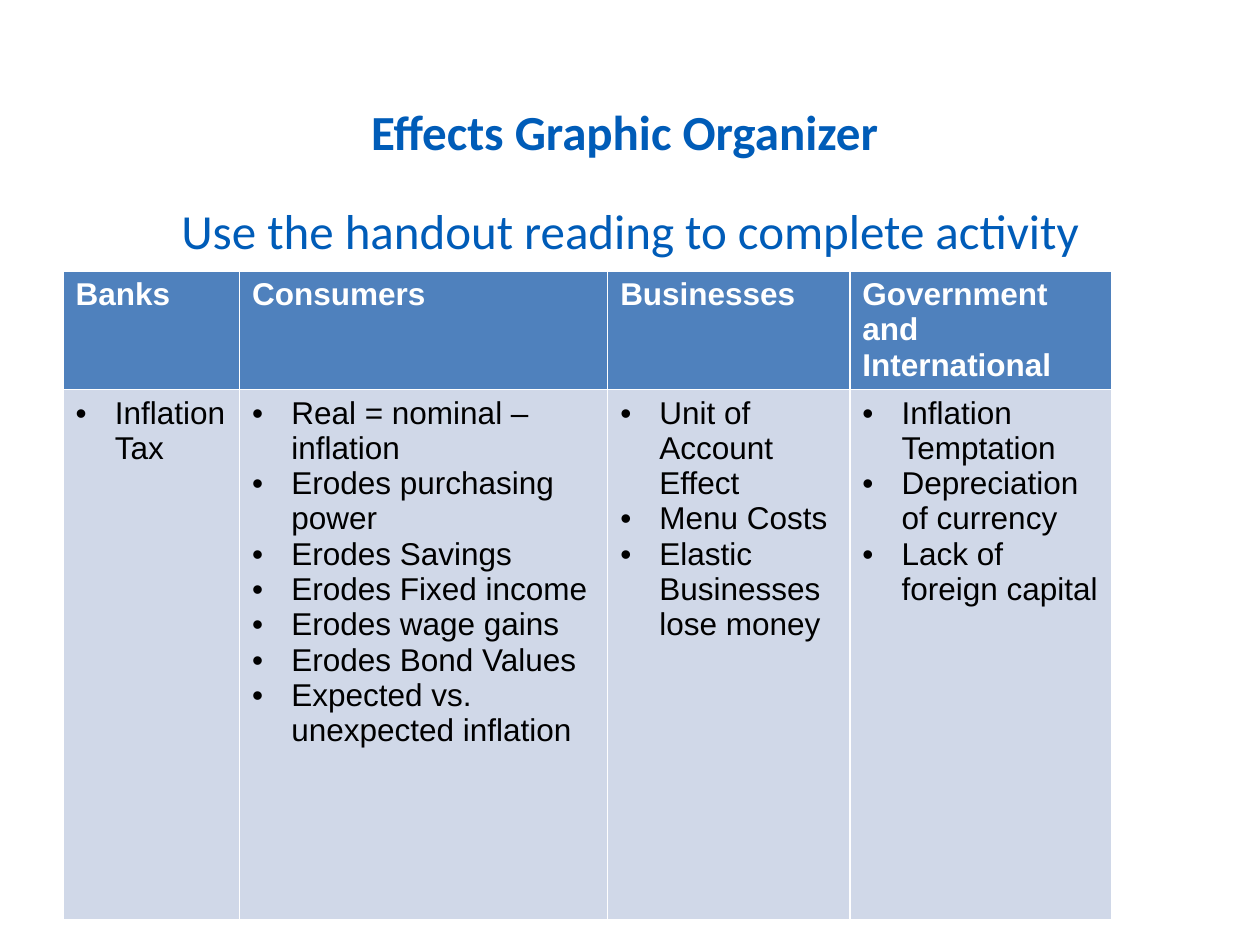
"""Build the slide on the effects of inflation."""
from lxml import etree
from pptx import Presentation
from pptx.dml.color import RGBColor
from pptx.enum import text
from pptx.oxml import ns
from pptx.util import Cm, Pt

HUES = {"title": "005CB8", "head": "4F81BD", "body": "D0D8E8",
        "white": "FFFFFF", "black": "000000"}
WIDTHS = (3.56, 7.42, 4.88, 5.28)
HEIGHTS = (1.96, 10.69)
EFFECTS = {
    "Banks": ["Inflation Tax"],
    "Consumers": ["Real = nominal – inflation", "Erodes purchasing power",
                  "Erodes Savings", "Erodes Fixed income",
                  "Erodes wage gains", "Erodes Bond Values",
                  "Expected vs. unexpected inflation"],
    "Businesses": ["Unit of Account Effect", "Menu Costs",
                   "Elastic Businesses lose money"],
    "Government and International": ["Inflation Temptation",
                                     "Depreciation of currency",
                                     "Lack of foreign capital"],
}


def style(font, name, size, hue, bold=None):
    """Set the face, size, colour and weight of a font."""
    font.name, font.size, font.bold = name, Pt(size), bold
    font.color.rgb = RGBColor.from_string(HUES[hue])


def add_bullet(para):
    """Give a paragraph a round bullet and a hanging indent."""
    props = para._p.get_or_add_pPr()
    props.set("marL", str(Cm(0.79)))
    props.set("indent", str(-Cm(0.79)))
    etree.SubElement(props, ns.qn("a:buFont")).set("typeface", "Arial")
    etree.SubElement(props, ns.qn("a:buChar")).set("char", "•")


def fill_cell(cell, lines, fill, hue, head):
    """Write lines into a cell, bulleted unless it is a heading."""
    cell.fill.solid()
    cell.fill.fore_color.rgb = RGBColor.from_string(HUES[fill])
    cell.text = "\n".join(lines)
    for para in cell.text_frame.paragraphs:
        if not head:
            add_bullet(para)
        style(para.font, "Arial", 18, hue, head)


def set_title(title):
    """Place the title and write its bold and plain lines."""
    title.left, title.top = Cm(1.27), Cm(2.16)
    title.width, title.height = Cm(22.86), Cm(2.13)
    frame = title.text_frame
    frame.auto_size = text.MSO_AUTO_SIZE.NONE
    frame.vertical_anchor = text.MSO_ANCHOR.MIDDLE
    para = frame.paragraphs[0]
    para.alignment = text.PP_ALIGN.CENTER
    para.line_spacing = Pt(57)
    style(para.font, "Calibri", 28, "title")
    top = para.add_run()
    top.text = "Effects Graphic Organizer "
    para.add_line_break()
    low = para.add_run()
    low.text = "Use the handout reading to complete activity"
    for run, bold in ((top, True), (low, False)):
        style(run.font, "Calibri", 28, "title", bold)


def add_grid(slide):
    """Add the table with one column per affected group."""
    grid = slide.shapes.add_table(
        2, len(EFFECTS), Cm(1.27), Cm(5.46),
        Cm(sum(WIDTHS)), Cm(sum(HEIGHTS))).table
    for row, height in zip(grid.rows, HEIGHTS):
        row.height = Cm(height)
    for col, (group, points) in enumerate(EFFECTS.items()):
        grid.columns[col].width = Cm(WIDTHS[col])
        fill_cell(grid.cell(0, col), [group], "head", "white", True)
        fill_cell(grid.cell(1, col), points, "body", "black", False)


def main():
    """Build and save the slide."""
    deck = Presentation()
    deck.slide_width, deck.slide_height = Cm(25.4), Cm(19.05)
    slide = deck.slides.add_slide(deck.slide_layouts[5])
    set_title(slide.shapes.title)
    add_grid(slide)
    deck.save("out.pptx")


if __name__ == "__main__":
    main()
